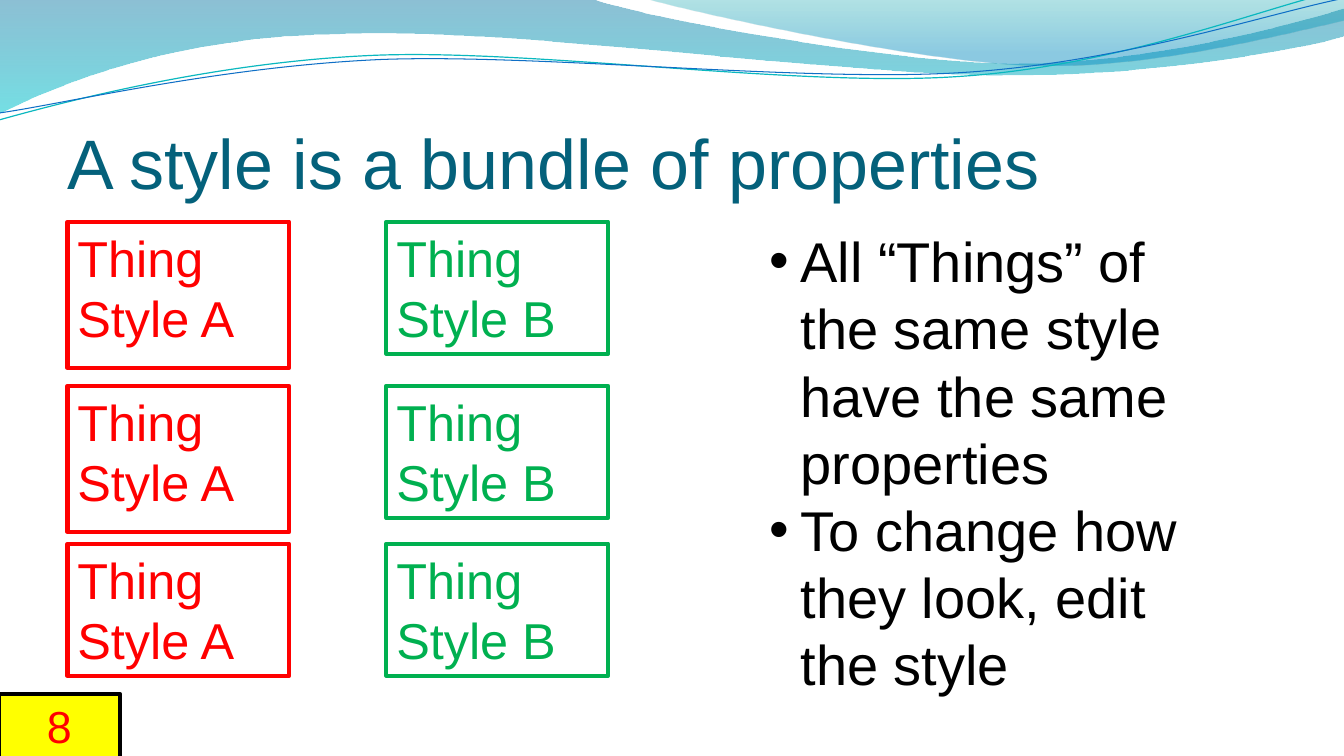
from lxml import etree
from pptx import Presentation
from pptx import util as u
from pptx.dml.color import RGBColor
from pptx.enum import shapes, text
from pptx.oxml import parse_xml
from pptx.oxml.ns import nsdecls, qn

Pt = u.Pt
RED, GREEN, BLACK, TEAL, YELLOW = "FF0000", "00B050", "000000", "04617B", "FFFF00"


def color(hex_value):
    return RGBColor.from_string(hex_value)


def write(frame, lines, size, ink, align=text.PP_ALIGN.LEFT, bullet_indent=0):
    """Fill a text frame with one paragraph per line."""
    frame.word_wrap = True
    for index, line in enumerate(lines):
        paragraph = frame.paragraphs[0] if index == 0 else frame.add_paragraph()
        paragraph.alignment = align
        run = paragraph.add_run()
        run.text = line
        run.font.name, run.font.size = SlideBuilder.FONT, Pt(size)
        run.font.color.rgb = color(ink)
        if bullet_indent:
            props = paragraph._p.get_or_add_pPr()
            props.set("marL", str(Pt(bullet_indent)))
            props.set("indent", str(-Pt(bullet_indent)))
            etree.SubElement(props, qn("a:buFont")).set("typeface", SlideBuilder.FONT)
            etree.SubElement(props, qn("a:buChar")).set("char", "•")


class SlideBuilder:
    FONT = "Arial"
    BORDER = 3

    def __init__(self, slide):
        self.shapes = slide.shapes

    def outline(self, start, segments, close):
        """Join lines (2 numbers) and cubic curves (6 numbers) into one outline."""
        builder = self.shapes.build_freeform(Pt(start[0]), Pt(start[1]))
        builder.add_line_segments([(Pt(s[-2]), Pt(s[-1])) for s in segments], close=close)
        shape = builder.convert_to_shape()
        shape.shadow.inherit = False
        # Bend the straight pieces that have control points
        pieces = list(shape._element.iter(qn("a:lnTo")))
        for piece, segment in zip(pieces, segments):
            if len(segment) == 6:
                piece.tag = qn("a:cubicBezTo")
                for index in (0, 1):
                    x, y = segment[2 * index:2 * index + 2]
                    control = etree.Element(qn("a:pt"))
                    control.set("x", str(Pt(x) - shape.left))
                    control.set("y", str(Pt(y) - shape.top))
                    piece.insert(index, control)
        return shape

    def wave(self, start, segments, stops):
        """Closed area with a vertical gradient of (percent, colour, opacity)."""
        shape = self.outline(start, segments, close=True)
        shape.line.fill.background()
        marks = "".join(
            f'<a:gs pos="{place * 1000}"><a:srgbClr val="{tint}">'
            f'<a:alpha val="{opacity * 1000}"/></a:srgbClr></a:gs>'
            for place, tint, opacity in stops)
        gradient = parse_xml(
            f'<a:gradFill {nsdecls("a")} rotWithShape="1"><a:gsLst>{marks}</a:gsLst>'
            '<a:lin ang="5400000" scaled="0"/></a:gradFill>')
        shape._element.spPr.find(qn("a:custGeom")).addnext(gradient)

    def strand(self, start, segments, ink, width):
        shape = self.outline(start, segments, close=False)
        shape.fill.background()
        shape.line.color.rgb, shape.line.width = color(ink), Pt(width)

    def box(self, left, top, width, height, lines, size, ink, border, fill=None,
            align=text.PP_ALIGN.LEFT):
        shape = self.shapes.add_shape(shapes.MSO_SHAPE.RECTANGLE,
                                      Pt(left), Pt(top), Pt(width), Pt(height))
        shape.shadow.inherit = False
        if fill:
            shape.fill.solid()
            shape.fill.fore_color.rgb = color(fill)
        else:
            shape.fill.background()
        shape.line.color.rgb, shape.line.width = color(border), Pt(self.BORDER)
        shape.text_frame.vertical_anchor = text.MSO_ANCHOR.TOP
        write(shape.text_frame, lines, size, ink, align=align)

    def title(self, left, top, width, height, line):
        frame = self.shapes.add_textbox(Pt(left), Pt(top), Pt(width), Pt(height)).text_frame
        frame.margin_left = frame.margin_right = frame.margin_bottom = 0
        frame.vertical_anchor = text.MSO_ANCHOR.BOTTOM
        write(frame, [line], 50, TEAL)

    def bullets(self, left, top, width, height, lines):
        frame = self.shapes.add_textbox(Pt(left), Pt(top), Pt(width), Pt(height)).text_frame
        write(frame, lines, 40, BLACK, bullet_indent=22.5)


def main():
    deck = Presentation()
    deck.slide_width, deck.slide_height = Pt(960), Pt(540)
    page = SlideBuilder(deck.slides.add_slide(deck.slide_layouts[6]))

    # Waves across the top
    page.wave((0, 0), [
        (422.6, -0.7),
        (456.5, 12.2, 637.2, 45.4, 727.9, 45.4),
        (819.4, 45.4, 920.2, 18.7, 959.8, 6.5),
        (961.2, 25.9),
        (943.9, 31.7, 835.2, 54.7, 715.7, 54),
        (596.9, 54, 366.5, 20.2, 247, 24.5),
        (123.8, 25.9, 43.9, 59.8, -0.7, 81.4),
    ], [(0, "0074A1", 45), (100, "00C6CF", 55)])
    page.wave((460.1, -0.7), [
        (488.9, 7.9, 654.5, 44.6, 738, 46.8),
        (821.5, 49.7, 923, 23, 959.8, 15.1),
        (959.8, 0),
    ], [(0, "00A1A9", 30), (80, "008BBF", 45)])

    # Thin strands along the waves
    page.strand((-0.7, 85.7), [
        (46.1, 72.7, 151.9, 44.6, 265.7, 39.6),
        (379.4, 34.6, 568.8, 62.6, 684, 54.7),
        (799.2, 47.5, 901.4, 5.8, 958.3, -7.2),
    ], "0AB8BF", 0.85)
    page.strand((0, 80.6), [
        (45.4, 74.2, 157, 47.5, 272.2, 42.5),
        (385.9, 38.2, 573.8, 59, 687.6, 51.8),
        (802.8, 44.6, 903.6, 10.1, 960.5, -1.4),
    ], "0F6FC6", 0.75)

    page.title(48, 55.4, 872, 90, "A style is a bundle of properties")

    # Things in two styles, one column per style
    row_tops = (158.4, 275.6, 388.4)
    styles = (("Style A", RED, 48.2, (104.4, 104.4, 94.3)),
              ("Style B", GREEN, 276, (94.3, 94.3, 94.3)))
    for style_name, ink, left, heights in styles:
        for top, height in zip(row_tops, heights):
            page.box(left, top, 158.4, height, ["Thing", style_name], 36, ink, border=ink)

    # Slide number
    page.box(-0.7, 495.7, 86.4, 46.1, ["8"], 32, RED, border=BLACK, fill=YELLOW,
             align=text.PP_ALIGN.CENTER)

    # Explanation
    page.bullets(542.2, 158.4, 339.8, 346.3, [
        "All “Things” of the same style have the same properties",
        "To change how they look, edit the style",
    ])

    deck.save("out.pptx")


if __name__ == "__main__":
    main()
